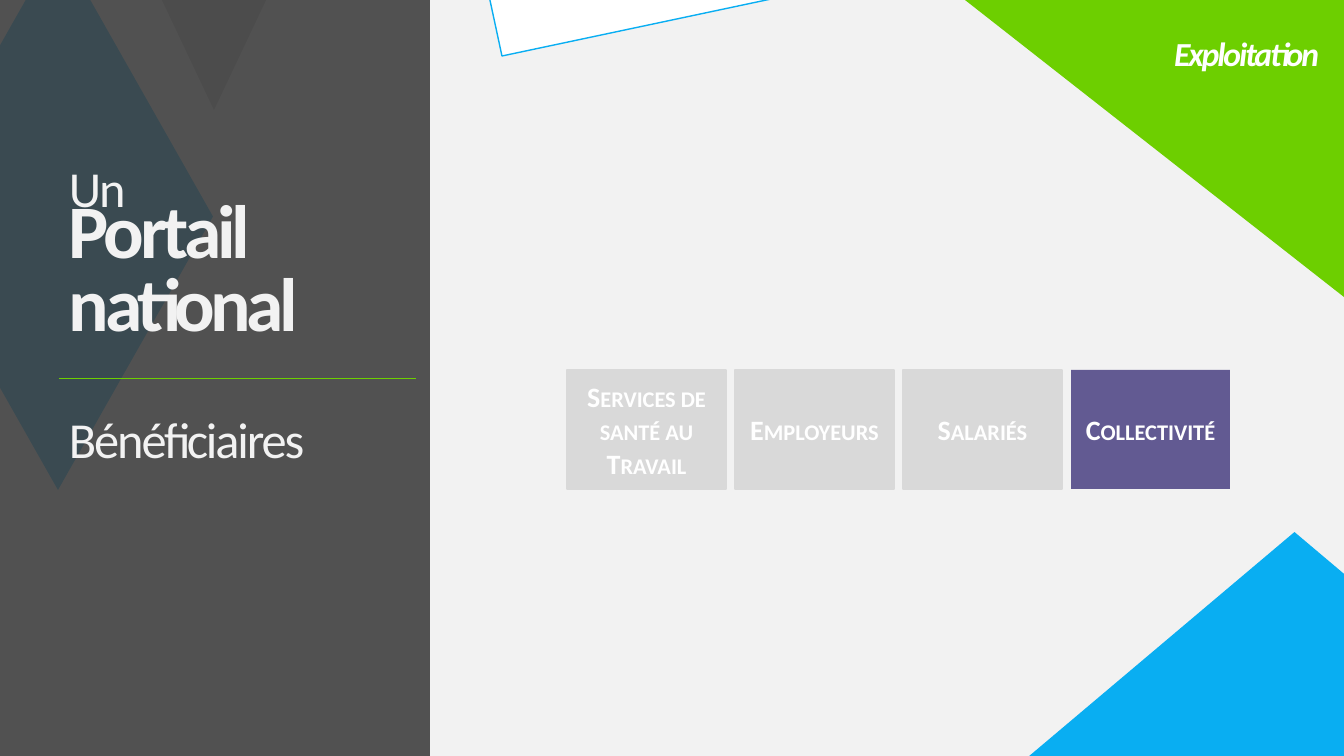
from pptx import Presentation
from pptx.dml.color import RGBColor
from pptx.enum import shapes, text
from pptx.oxml.ns import qn
from pptx.util import Emu, Pt

PX = 914400 / 100.8
FONT = "Calibri"

WHITE = RGBColor(0xFF, 0xFF, 0xFF)
PAPER = RGBColor(0xF2, 0xF2, 0xF2)
SILVER = RGBColor(0xBF, 0xBF, 0xBF)
MUTED = RGBColor(0xD9, 0xD9, 0xD9)
CHARCOAL = RGBColor(0x40, 0x40, 0x40)
GREEN = RGBColor(0x6D, 0xCF, 0x00)
BLUE = RGBColor(0x09, 0xAE, 0xF2)
PURPLE = RGBColor(0x62, 0x5A, 0x92)

# Content: lengths in px, boxes as left, top, width, height
ARROW = [(26, -287), (214, -187), (402, -287), (214, 110)]
SHEET = [(502, 56), (356, -623), (1212, -562), (1569, -170)]
RULE = (59, 378, 416, 378)

HEADINGS = [
    dict(words="Un", box=(59, 151, 380, 72), size=36, spacing=-1.5),
    dict(words="Portail national", box=(59, 194, 371, 158), size=54,
         spacing=-3, bold=True, leading=0.8),
    dict(words="Bénéficiaires", box=(59, 402, 387, 72), size=36, spacing=-1.5),
]
CORNER = dict(words="Exploitation", box=(932, 28, 397, 50), size=24,
              spacing=-1.5, bold=True, italic=True, color=WHITE,
              align=text.PP_ALIGN.RIGHT, anchor=text.MSO_ANCHOR.TOP)

BENEFICIARIES = ["Services de santé au Travail", "Employeurs", "Salariés",
                 "Collectivité"]
CURRENT = "Collectivité"
TILE_LEFT, TILE_TOP, TILE_WIDTH, TILE_HEIGHT, TILE_GAP = 567, 370, 159, 119, 9


def px(*lengths):
    return [Emu(round(length * PX)) for length in lengths]


def paint(shape, fill, line=None):
    shape.shadow.inherit = False
    shape.fill.solid()
    shape.fill.fore_color.rgb = fill
    if line is None:
        shape.line.fill.background()
    else:
        shape.line.color.rgb = line
        shape.line.width = Pt(1)
    return shape


def add_block(page, kind, box, fill, line=None):
    return paint(page.shapes.add_shape(kind, *px(*box)), fill, line)


def add_outline(page, points, fill, line=None):
    builder = page.shapes.build_freeform(*points[0], scale=PX)
    builder.add_line_segments(points[1:], close=True)
    return paint(builder.convert_to_shape(), fill, line)


def style(span, size, color, bold=False, italic=False):
    span.font.name = FONT
    span.font.size = Pt(size)
    span.font.color.rgb = color
    span.font.bold = bold
    span.font.italic = italic


def add_label(page, words, box, size, spacing, bold=False, italic=False,
              color=PAPER, leading=None, align=text.PP_ALIGN.LEFT,
              anchor=text.MSO_ANCHOR.MIDDLE):
    frame = page.shapes.add_textbox(*px(*box)).text_frame
    frame.word_wrap = True
    frame.vertical_anchor = anchor
    frame.text = words
    para = frame.paragraphs[0]
    para.alignment = align
    if leading:
        para.line_spacing = leading
    span = para.runs[0]
    style(span, size, color, bold, italic)
    span.font._element.set("spc", str(round(spacing * 100)))


def add_tile(page, index, words):
    left = TILE_LEFT + index * (TILE_WIDTH + TILE_GAP)
    fill, line = (PURPLE, None) if words == CURRENT else (MUTED, MUTED)
    tile = add_block(page, shapes.MSO_SHAPE.RECTANGLE,
                     (left, TILE_TOP, TILE_WIDTH, TILE_HEIGHT), fill, line)
    frame = tile.text_frame
    frame.word_wrap = True
    frame.vertical_anchor = text.MSO_ANCHOR.MIDDLE
    frame.margin_left, frame.margin_right = px(4, 4)
    frame.margin_top, frame.margin_bottom = px(5, 5)
    frame.text = words
    para = frame.paragraphs[0]
    para.alignment = text.PP_ALIGN.CENTER
    span = para.runs[0]
    style(span, 20, WHITE, bold=True)
    span.font._element.set("cap", "small")


def main():
    deck = Presentation()
    deck.slide_width, deck.slide_height = px(1344, 756)
    page = deck.slides.add_slide(deck.slide_layouts[6])
    page.background.fill.solid()
    page.background.fill.fore_color.rgb = PAPER

    # Decoration and translucent side panel
    kinds = shapes.MSO_SHAPE
    add_outline(page, ARROW, SILVER)
    corner = add_block(page, kinds.RIGHT_TRIANGLE, (965, 0, 379, 297), GREEN)
    corner.rotation = 180
    add_block(page, kinds.DIAMOND, (-97, -57, 310, 547), BLUE)
    panel = add_block(page, kinds.RECTANGLE, (0, 0, 430, 756), CHARCOAL)
    tint = panel._element.spPr.find(qn("a:solidFill"))[0]
    tint.makeelement(qn("a:alpha"), {})
    alpha = tint.makeelement(qn("a:alpha"), {"val": "90000"})
    tint.append(alpha)
    add_block(page, kinds.DIAMOND, (1028, 532, 533, 450), BLUE)
    add_outline(page, SHEET, WHITE, BLUE)

    # Side headings and the rule between them
    for heading in HEADINGS:
        add_label(page, **heading)
    rule = page.shapes.add_connector(shapes.MSO_CONNECTOR.STRAIGHT, *px(*RULE))
    rule.line.color.rgb = GREEN
    rule.line.width = Pt(0.5)
    properties = rule._element.spPr
    properties.append(properties.makeelement(qn("a:effectLst"), {}))

    # Beneficiary tiles and corner label
    for index, words in enumerate(BENEFICIARIES):
        add_tile(page, index, words)
    add_label(page, **CORNER)

    deck.save("out.pptx")


if __name__ == "__main__":
    main()
